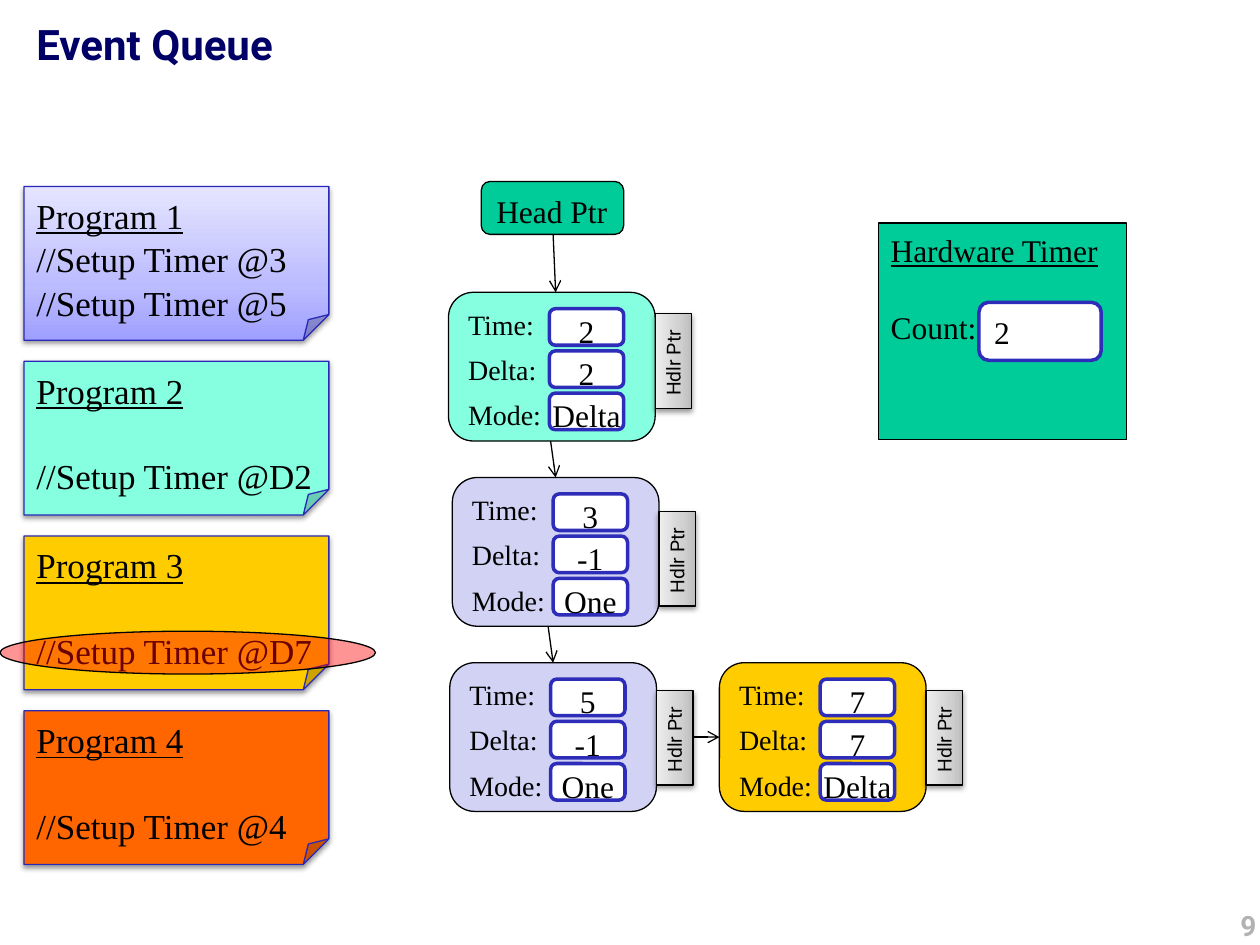
from dataclasses import dataclass
from typing import Optional

from lxml import etree
from pptx import Presentation
from pptx import util as u
from pptx.dml.color import RGBColor
from pptx.enum import shapes, text
from pptx.oxml.ns import qn

COLUMNS, ROWS = 100, 75
Kind = shapes.MSO_SHAPE
Align = text.PP_ALIGN


@dataclass(frozen=True)
class Theme:
    serif: str = "Times New Roman"
    sans: str = "Roboto"
    ink: str = "000000"
    title: str = "000066"
    number: str = "B2B2B2"
    white: str = "FFFFFF"
    field_line: str = "2D2DB9"
    note_line: str = "2929B8"
    green: str = "00CC99"
    mint: str = "85FFE0"
    lavender: str = "D2D2F4"
    yellow: str = "FFCC00"
    orange: str = "FF6600"
    red: str = "FF0000"
    blues: tuple = ((0, "9F9FFF"), (35, "BBBBFF"), (100, "E5E5FF"))
    grays: tuple = ((0, "BDBDBD"), (35, "D1D1D1"), (100, "EEEEEE"))
    title_size: float = 24
    note_size: float = 20
    body_size: float = 18
    label_size: float = 16
    tab_size: float = 11
    thin: float = 0.75
    thick: float = 2


THEME = Theme()


@dataclass(frozen=True)
class Area:
    column: float
    row: float
    columns: float
    rows: float


@dataclass(frozen=True)
class Line:
    words: str
    size: float = THEME.body_size
    font: str = THEME.serif
    color: str = THEME.ink
    bold: bool = False
    underline: bool = False
    align: Align = Align.LEFT
    before: float = 0
    spacing: float = 1.04


@dataclass(frozen=True)
class Program:
    number: int
    fill: object
    calls: tuple
    gap: float = 24


@dataclass(frozen=True)
class Event:
    column: float
    row: float
    fill: str
    values: tuple
    tab_drop: float


PROGRAMS = (
    Program(1, THEME.blues, ("//Setup Timer @3", "//Setup Timer @5"), 0),
    Program(2, THEME.mint, ("//Setup Timer @D2",)),
    Program(3, THEME.yellow, ("//Setup Timer @D7",)),
    Program(4, THEME.orange, ("//Setup Timer @4",)),
)
EVENTS = (
    Event(35.6, 23.2, THEME.mint, ("2", "2", "Delta"), 5.45),
    Event(35.9, 37.9, THEME.lavender, ("3", "-1", "One"), 6.45),
    Event(35.7, 52.6, THEME.lavender, ("5", "-1", "One"), 5.95),
    Event(57.1, 52.6, THEME.yellow, ("7", "7", "Delta"), 5.95),
)
ARROWS = (
    (43.9, 18.6, 44.1, 23.2),
    (43.7, 35, 44.1, 37.9),
    (43.5, 49.7, 43.9, 52.6),
    (52.1, 58.5, 57.1, 58.5),
)

deck = Presentation()
deck.slide_width, deck.slide_height = u.Inches(10), u.Inches(7.5)
page = deck.slides.add_slide(deck.slide_layouts[6])


def place(column: float, row: float) -> tuple:
    return round(deck.slide_width * column / COLUMNS), round(deck.slide_height * row / ROWS)


def bounds(area: Area) -> tuple:
    return place(area.column, area.row) + place(area.columns, area.rows)


def child(parent, tag: str, **values):
    return etree.SubElement(parent, qn(tag), {key: str(value) for key, value in values.items()})


def write(box, lines: tuple, wrap: bool = True, inset: Optional[float] = None) -> None:
    frame = box.text_frame
    frame.word_wrap = wrap
    frame.vertical_anchor = text.MSO_ANCHOR.TOP
    if inset is not None:
        for side in ("left", "top", "right", "bottom"):
            setattr(frame, f"margin_{side}", u.Inches(inset))
    for index, line in enumerate(lines):
        para = frame.add_paragraph() if index else frame.paragraphs[0]
        layout = {"alignment": line.align, "space_before": u.Pt(line.before), "line_spacing": line.spacing}
        for name, value in layout.items():
            setattr(para, name, value)
        span = para.add_run()
        span.text = line.words
        style = {"name": line.font, "size": u.Pt(line.size), "bold": line.bold, "underline": line.underline}
        for name, value in style.items():
            setattr(span.font, name, value)
        span.font.color.rgb = RGBColor.from_string(line.color)


def paint(box, fill) -> None:
    if isinstance(fill, str):
        box.fill.solid()
        box.fill.fore_color.rgb = RGBColor.from_string(fill)
        return
    box.fill.gradient()
    box.fill.gradient_angle = 90
    stops = box._element.spPr.find(".//" + qn("a:gsLst"))
    for stop in list(stops):
        stops.remove(stop)
    for position, color in fill:
        child(child(stops, "a:gs", pos=position * 1000), "a:srgbClr", val=color)


def draw(kind: Kind, area: Area, fill, line: str = THEME.ink, width: float = THEME.thin, shadow: bool = False):
    box = page.shapes.add_shape(kind, *bounds(area))
    paint(box, fill)
    box.line.color.rgb = RGBColor.from_string(line)
    box.line.width = u.Pt(width)
    box.shadow.inherit = False
    if shadow:
        effects = box._element.spPr.find(qn("a:effectLst"))
        cast = child(effects, "a:outerShdw", blurRad=u.Pt(3.1), dist=u.Pt(1.6), dir=5400000, rotWithShape=0)
        child(child(cast, "a:srgbClr", val=THEME.ink), "a:alpha", val=38000)
    return box


def draw_label(area: Area, line: Line) -> None:
    write(page.shapes.add_textbox(*bounds(area)), (line,))


def draw_field(area: Area, line: Line, inset: Optional[float] = None) -> None:
    box = draw(Kind.ROUNDED_RECTANGLE, area, THEME.white, THEME.field_line, THEME.thick)
    write(box, (line,), inset=inset)


def draw_arrow(start: tuple, end: tuple) -> None:
    arrow = page.shapes.add_connector(shapes.MSO_CONNECTOR.STRAIGHT, *start, *end)
    arrow.line.color.rgb = RGBColor.from_string(THEME.ink)
    arrow.line.width = u.Pt(THEME.thin)
    child(arrow.line._get_or_add_ln(), "a:tailEnd", type="arrow")
    child(arrow._element.spPr, "a:effectLst")


def draw_program(program: Program, row: float) -> None:
    box = draw(Kind.FOLDED_CORNER, Area(1.9, row, 24.2, 12.2), program.fill, THEME.note_line, shadow=True)
    heading = Line(f"Program {program.number}", THEME.note_size, underline=True)
    calls = tuple(Line(call, THEME.note_size, before=program.gap) for call in program.calls)
    write(box, (heading, *calls))


def draw_event(event: Event) -> None:
    card = draw(Kind.ROUNDED_RECTANGLE, Area(event.column, event.row, 16.4, 11.8), event.fill)
    names = ("Time:", "Delta:", "Mode:")
    write(card, tuple(Line(name, THEME.label_size, before=6 if index else 0) for index, name in enumerate(names)))
    for index, value in enumerate(event.values):
        area = Area(event.column + 8, event.row + 1.3 + 3.35 * index, 5.9, 2.9)
        draw_field(area, Line(value, align=Align.CENTER), inset=0)
    tab_area = Area(event.column + 14.1, event.row + event.tab_drop - 1.45, 7.5, 2.9)
    tab = draw(Kind.RECTANGLE, tab_area, THEME.grays, shadow=True)
    tab.rotation = 270
    write(tab, (Line("Hdlr Ptr", THEME.tab_size, THEME.sans, spacing=1),), wrap=False)


def main() -> None:
    draw_label(Area(1.9, 0.8, 97.1, 10), Line("Event Queue", THEME.title_size, THEME.sans, THEME.title, True))
    draw_label(Area(69, 71.5, 31.7, 5),
               Line("9", THEME.label_size, THEME.sans, THEME.number, True, align=Align.RIGHT))
    for index, program in enumerate(PROGRAMS):
        draw_program(program, 14.8 + 13.87 * index)
    highlight = draw(Kind.OVAL, Area(0, 50.1, 29.8, 3.4), THEME.red)
    child(highlight._element.spPr.find(qn("a:solidFill"))[0], "a:alpha", val=42000)
    write(draw(Kind.ROUNDED_RECTANGLE, Area(38.2, 14.4, 11.3, 4.2), THEME.green), (Line("Head Ptr"),))
    timer = draw(Kind.RECTANGLE, Area(69.7, 17.7, 19.7, 17.2), THEME.green)
    write(timer, (Line("Hardware Timer", underline=True), Line("Count:", before=21.5)))
    draw_field(Area(77.7, 24, 9.7, 4.6), Line("2"))
    for left, top, right, bottom in ARROWS:
        draw_arrow(place(left, top), place(right, bottom))
    for event in EVENTS:
        draw_event(event)
    deck.save("out.pptx")


if __name__ == "__main__":
    main()
